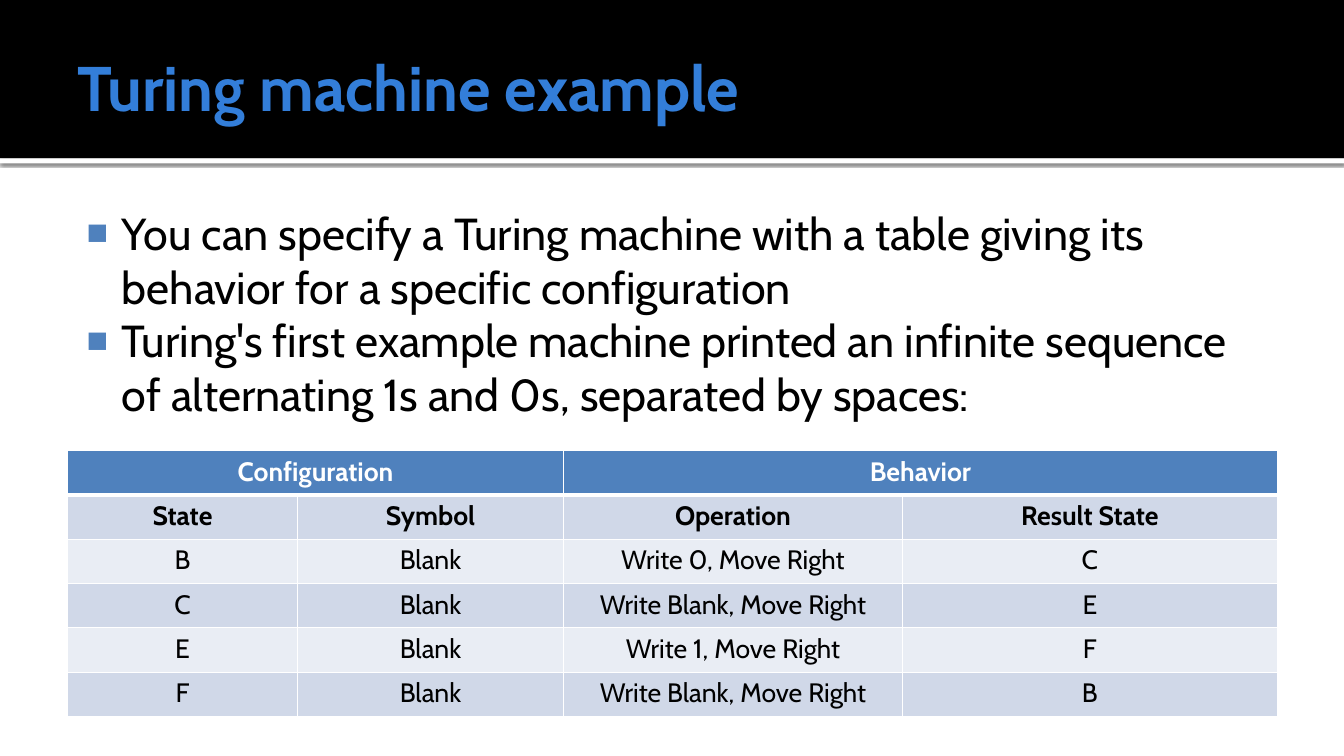
from dataclasses import dataclass

from lxml.etree import SubElement
from pptx import Presentation
from pptx.dml.color import RGBColor
from pptx.enum.shapes import MSO_SHAPE
from pptx.enum.text import MSO_ANCHOR, MSO_AUTO_SIZE, PP_ALIGN
from pptx.oxml.ns import qn
from pptx.util import Inches, Pt


@dataclass(frozen=True)
class Theme:
    font: str = "Cabin"
    black: str = "000000"
    white: str = "FFFFFF"
    title: str = "337ED9"
    accent: str = "4F81BD"
    dark: str = "D0D8E8"
    light: str = "E9EDF4"
    head_size: int = 45
    body_size: int = 32
    cell_size: int = 19


THEME = Theme()
TITLE = "Turing machine example"
POINTS = [
    "You can specify a Turing machine with a table giving its "
    "behavior for a specific configuration",
    "Turing's first example machine printed an infinite sequence "
    "of alternating 1s and 0s, separated by spaces:",
]
ROWS = [
    ["Configuration", "", "Behavior", ""],
    ["State", "Symbol", "Operation", "Result State"],
    ["B", "Blank", "Write 0, Move Right", "C"],
    ["C", "Blank", "Write Blank, Move Right", "E"],
    ["E", "Blank", "Write 1, Move Right", "F"],
    ["F", "Blank", "Write Blank, Move Right", "B"],
]
WIDTHS = [2.28, 2.64, 3.36, 3.72]
HEIGHT = 0.44


def add_node(parent, tag, **attrs):
    return SubElement(parent, qn(tag), {k: str(v) for k, v in attrs.items()})


def write(para, text, size, color=THEME.black, bold=False, align=PP_ALIGN.LEFT):
    para.alignment = align
    para.space_before = para.space_after = Pt(0)
    run = para.add_run()
    run.text = text
    font = run.font
    font.name, font.size, font.bold = THEME.font, Pt(size), bold
    font.color.rgb = RGBColor.from_string(color)


def place(holder, box, margins, anchor):
    holder.left, holder.top, holder.width, holder.height = map(Inches, box)
    frame = holder.text_frame
    frame.word_wrap = True
    frame.auto_size = MSO_AUTO_SIZE.NONE
    frame.vertical_anchor = anchor
    (frame.margin_left, frame.margin_top,
     frame.margin_right, frame.margin_bottom) = map(Inches, margins)
    return frame


def add_bar(slide, top, height, color):
    bar = slide.shapes.add_shape(
        MSO_SHAPE.RECTANGLE, 0, Inches(top), Inches(13.33), Inches(height))
    bar.fill.solid()
    bar.fill.fore_color.rgb = RGBColor.from_string(color)
    bar.line.fill.background()
    bar.shadow.inherit = False
    # Bars lie behind the title
    slide.shapes.title.element.addprevious(bar.element)
    return bar


def add_shadow(bar):
    effects = bar.element.spPr.find(qn("a:effectLst"))
    shadow = add_node(effects, "a:outerShdw", blurRad=Pt(2.5), dist=Pt(0.8),
                      dir=90 * 60000, algn="t", rotWithShape=0)
    tint = add_node(shadow, "a:srgbClr", val=THEME.black)
    add_node(tint, "a:alpha", val=60000)


def add_bullet(para):
    props = para._p.get_or_add_pPr()
    props.set("marL", str(Inches(0.48)))
    props.set("indent", str(Inches(-0.35)))
    color = add_node(props, "a:buClr")
    add_node(color, "a:srgbClr", val=THEME.accent)
    add_node(props, "a:buSzPct", val=80000)
    add_node(props, "a:buFont", typeface="Arial")
    add_node(props, "a:buChar", char="■")


def add_list(frame, points):
    for i, point in enumerate(points):
        para = frame.add_paragraph() if i else frame.paragraphs[0]
        write(para, point, THEME.body_size)
        add_bullet(para)


def add_edges(cell, row):
    props = cell._tc.get_or_add_tcPr()
    thick = {(0, "B"), (1, "T")}
    for side in "LRTB":
        width = 3 if (row, side) in thick else 1
        line = add_node(props, f"a:ln{side}", w=Pt(width))
        fill = add_node(line, "a:solidFill")
        add_node(fill, "a:srgbClr", val=THEME.white)


def add_grid(slide):
    grid = slide.shapes.add_table(
        len(ROWS), len(WIDTHS), Inches(0.67), Inches(4.47),
        Inches(sum(WIDTHS)), Inches(HEIGHT * len(ROWS))).table
    grid.first_row = grid.horz_banding = False
    for col, width in zip(grid.columns, WIDTHS):
        col.width = Inches(width)
    for r, texts in enumerate(ROWS):
        grid.rows[r].height = Inches(HEIGHT)
        shade = THEME.accent if r == 0 else THEME.dark if r % 2 else THEME.light
        for c, text in enumerate(texts):
            cell = grid.cell(r, c)
            add_edges(cell, r)
            cell.fill.solid()
            cell.fill.fore_color.rgb = RGBColor.from_string(shade)
            cell.margin_left = cell.margin_right = Inches(0.11)
            cell.margin_top = cell.margin_bottom = Inches(0.05)
            if text:
                write(cell.text_frame.paragraphs[0], text, THEME.cell_size,
                      color=THEME.black if r else THEME.white,
                      bold=r < 2, align=PP_ALIGN.CENTER)
    # Group headings span two columns each
    for c in (0, 2):
        grid.cell(0, c).merge(grid.cell(0, c + 1))


def main():
    deck = Presentation()
    deck.slide_width, deck.slide_height = Inches(13.33), Inches(7.5)
    slide = deck.slides.add_slide(deck.slide_layouts[1])

    # Header band and its shadowed rule
    add_shadow(add_bar(slide, 1.57, 0.05, THEME.white))
    add_bar(slide, 0, 1.57, THEME.black)

    # Title and list
    head = place(slide.shapes.title, (0.67, 0.17, 12, 1.37),
                 (0.1, 0.05, 0.05, 0.05), MSO_ANCHOR.MIDDLE)
    write(head.paragraphs[0], TITLE, THEME.head_size,
          color=THEME.title, bold=True)
    body = place(slide.placeholders[1], (0.67, 1.94, 12, 5.06),
                 (0.06, 0.1, 0.1, 0.05), MSO_ANCHOR.TOP)
    add_list(body, POINTS)

    # Table of configurations
    add_grid(slide)
    deck.save("out.pptx")


if __name__ == "__main__":
    main()
